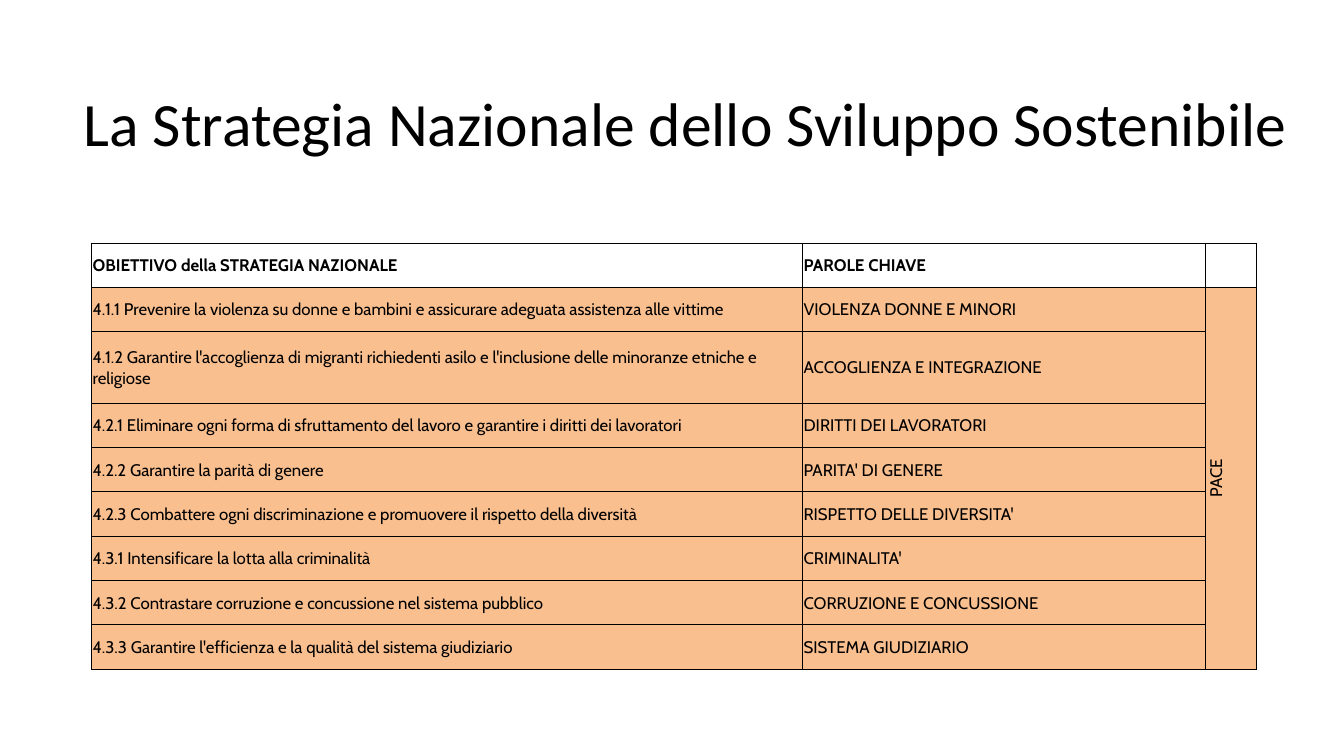
from lxml.etree import SubElement as Sub
from pptx import Presentation
from pptx.dml.color import RGBColor as RGB
from pptx.enum.text import MSO_ANCHOR as Anchor, MSO_AUTO_SIZE as Auto, PP_ALIGN as Align
from pptx.oxml.ns import qn
from pptx.util import Inches, Pt

WHITE, PEACH, BLACK = "FFFFFF", "FABF8F", "000000"
HEAD = ("OBIETTIVO della STRATEGIA NAZIONALE", "PAROLE CHIAVE")
GOALS = [
    ("4.1.1 Prevenire la violenza su donne e bambini e assicurare adeguata assistenza alle vittime",
     "VIOLENZA DONNE E MINORI"),
    ("4.1.2 Garantire l'accoglienza di migranti richiedenti asilo e l'inclusione delle minoranze etniche e religiose",
     "ACCOGLIENZA E INTEGRAZIONE"),
    ("4.2.1 Eliminare ogni forma di sfruttamento del lavoro e garantire i diritti dei lavoratori",
     "DIRITTI DEI LAVORATORI"),
    ("4.2.2 Garantire la parità di genere", "PARITA' DI GENERE"),
    ("4.2.3 Combattere ogni discriminazione e promuovere il rispetto della diversità",
     "RISPETTO DELLE DIVERSITA'"),
    ("4.3.1 Intensificare la lotta alla criminalità", "CRIMINALITA'"),
    ("4.3.2 Contrastare corruzione e concussione nel sistema pubblico",
     "CORRUZIONE E CONCUSSIONE"),
    ("4.3.3 Garantire l'efficienza e la qualità del sistema giudiziario",
     "SISTEMA GIUDIZIARIO"),
]
COLS = (7.05, 3.99, 0.51)
ROWS = [0.71 if i == 2 else 0.44 for i in range(len(GOALS) + 1)]


def color(code):
    return RGB.from_string(code)


class Page:
    title_font, body_font = "Calibri", "Cabin"

    def __init__(self, deck):
        self.slide = deck.slides.add_slide(deck.slide_layouts[5])

    def text(self, para, words, font, size, bold=False):
        run = para.add_run()
        run.text = words
        run.font.name, run.font.size, run.font.bold = font, Pt(size), bold
        run.font.color.rgb = color(BLACK)

    def title(self, words, x, y, w, h):
        box = self.slide.shapes.title
        box.left, box.top, box.width, box.height = map(Inches, (x, y, w, h))
        frame = box.text_frame
        frame.word_wrap, frame.auto_size = True, Auto.NONE
        frame.vertical_anchor = Anchor.MIDDLE
        para = frame.paragraphs[0]
        para.alignment, para.line_spacing = Align.LEFT, 0.9
        self.text(para, words, self.title_font, 44)

    def border(self, cell):
        props = cell._tc.get_or_add_tcPr()
        for i, side in enumerate("LRTB"):
            line = Sub(props, qn("a:ln" + side), w=str(Pt(0.5)))
            fill = Sub(line, qn("a:solidFill"))
            Sub(fill, qn("a:srgbClr"), val=BLACK)
            props.insert(i, line)

    def cell(self, cell, words, bold=False):
        cell.vertical_anchor = Anchor.MIDDLE
        cell.margin_left = cell.margin_right = cell.margin_top = Inches(0.01)
        cell.margin_bottom = Inches(0)
        self.text(cell.text_frame.paragraphs[0], words, self.body_font, 12, bold)

    def table(self, x, y, cols, rows):
        size = map(Inches, (x, y, sum(cols), sum(rows)))
        grid = self.slide.shapes.add_table(len(rows), len(cols), *size).table
        for col, width in zip(grid.columns, cols):
            col.width = Inches(width)
        for i, (row, height) in enumerate(zip(grid.rows, rows)):
            row.height = Inches(height)
            for cell in row.cells:
                cell.fill.solid()
                cell.fill.fore_color.rgb = color(PEACH if i else WHITE)
                self.border(cell)
        return grid


def main():
    deck = Presentation()
    deck.slide_width, deck.slide_height = Inches(13.33), Inches(7.5)
    page = Page(deck)
    page.title("La Strategia Nazionale dello Sviluppo Sostenibile", 0.73, 0.53, 12.26, 1.45)
    grid = page.table(0.91, 2.41, COLS, ROWS)
    for i, texts in enumerate([HEAD] + GOALS):
        for j, words in enumerate(texts):
            page.cell(grid.cell(i, j), words, bold=i == 0)
    theme = grid.cell(1, 2)
    theme.merge(grid.cell(len(GOALS), 2))
    page.cell(theme, "PACE")
    theme.text_frame.paragraphs[0].alignment = Align.CENTER
    theme._tc.get_or_add_tcPr().set("vert", "vert270")
    deck.save("out.pptx")


if __name__ == "__main__":
    main()
